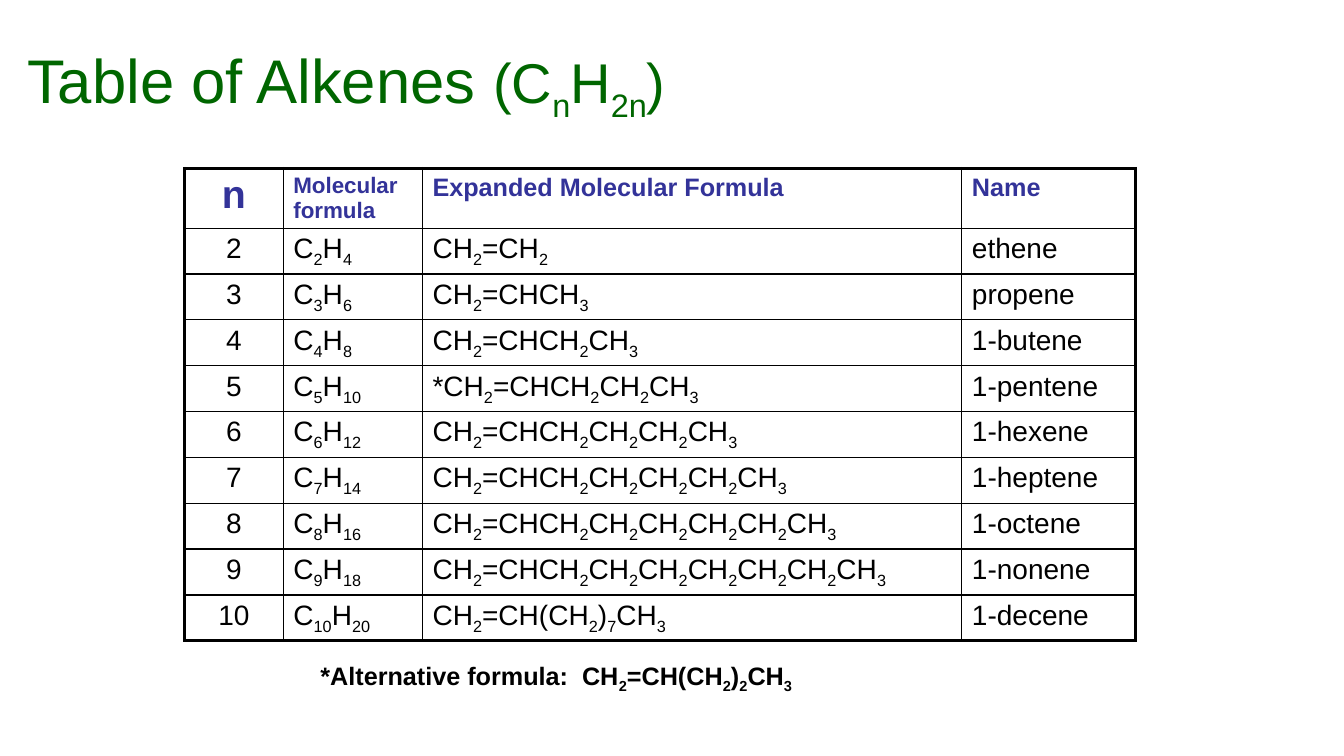
from pptx import Presentation
from pptx.dml.color import RGBColor
from pptx.enum.text import MSO_AUTO_SIZE as AutoSize, PP_ALIGN as Align
from pptx.oxml.ns import qn
from pptx.util import Inches, Pt
from lxml.etree import SubElement

FONT = "Arial"
BLACK, GREEN, BLUE = "000000", "006600", "333399"
NO_STYLE = "{2D5ABB26-0587-4C30-8999-92F81FD0307C}"
COLUMN_WIDTHS = [0.98, 1.38, 5.35, 1.72]
HEADER_HEIGHT, ROW_HEIGHT = 0.47, 0.44
THIN, THICK = 1, 2.25
HEADERS = [("n", 28), ("Molecular formula", 16),
           ("Expanded Molecular Formula", 18), ("Name", 18)]
NAMES = ["ethene", "propene", "1-butene", "1-pentene", "1-hexene",
         "1-heptene", "1-octene", "1-nonene", "1-decene"]
# Underscores enclose subscripts
SPECIAL_FORMULAS = {2: "CH_2_=CH_2_", 10: "CH_2_=CH(CH_2_)_7_CH_3_"}


def color(hex_value):
    return RGBColor.from_string(hex_value)


def set_font(paragraph, size, hex_value, bold=False):
    font = paragraph.font
    font.name, font.size, font.bold = FONT, Pt(size), bold
    font.color.rgb = color(hex_value)


def add_formula(paragraph, text, size=None):
    """Add runs, lowering each part enclosed in underscores."""
    for index, part in enumerate(text.split("_")):
        if not part:
            continue
        run = paragraph.add_run()
        run.text = part
        if size:
            run.font.size = Pt(size)
        if index % 2:
            run._r.get_or_add_rPr().set("baseline", "-25000")


def add_text_box(slide, left, top, width, height):
    shape = slide.shapes.add_textbox(
        Inches(left), Inches(top), Inches(width), Inches(height))
    shape.text_frame.word_wrap = False
    shape.text_frame.auto_size = AutoSize.SHAPE_TO_FIT_TEXT
    return shape.text_frame.paragraphs[0]


def add_title(slide, left, top, width, height):
    paragraph = add_text_box(slide, left, top, width, height)
    set_font(paragraph, 44, GREEN)
    add_formula(paragraph, "Table of Alkenes ", 44)
    add_formula(paragraph, "(C_n_H_2n_)", 40)


def add_footnote(slide, left, top, width, height):
    paragraph = add_text_box(slide, left, top, width, height)
    set_font(paragraph, 18, BLACK, bold=True)
    add_formula(paragraph, "*Alternative formula:  CH_2_=CH(CH_2_)_2_CH_3_")


def set_borders(cell, widths):
    properties = cell._tc.get_or_add_tcPr()
    for side, width in widths.items():
        line = SubElement(properties, qn(f"a:ln{side}"), w=str(Pt(width)))
        fill = SubElement(line, qn("a:solidFill"))
        SubElement(fill, qn("a:srgbClr"), val=BLACK)


def set_space_before(paragraph, percent):
    spacing = SubElement(paragraph._p.get_or_add_pPr(), qn("a:spcBef"))
    SubElement(spacing, qn("a:spcPct"), val=str(percent * 1000))


def alkene_row(n, name):
    star = "*" if n == 5 else ""
    chain = "CH_2_=CH" + "CH_2_" * (n - 3) + "CH_3_"
    formula = star + SPECIAL_FORMULAS.get(n, chain)
    return [str(n), f"C_{n}_H_{2 * n}_", formula, name]


def add_alkene_table(slide, left, top):
    rows = [[text for text, _ in HEADERS]]
    rows += [alkene_row(n, name) for n, name in enumerate(NAMES, start=2)]
    last_row, last_column = len(rows) - 1, len(COLUMN_WIDTHS) - 1
    frame = slide.shapes.add_table(
        len(rows), len(COLUMN_WIDTHS), Inches(left), Inches(top),
        Inches(sum(COLUMN_WIDTHS)),
        Inches(HEADER_HEIGHT + ROW_HEIGHT * last_row))
    table = frame.table
    table.first_row = table.horz_banding = False
    table._tbl.tblPr.find(qn("a:tableStyleId")).text = NO_STYLE

    for column, width in zip(table.columns, COLUMN_WIDTHS):
        column.width = Inches(width)
    for i, values in enumerate(rows):
        table.rows[i].height = Inches(ROW_HEIGHT if i else HEADER_HEIGHT)
        for j, text in enumerate(values):
            cell = table.cell(i, j)
            # Thick outer frame, thin inner grid
            set_borders(cell, {
                "L": THICK if j == 0 else THIN,
                "R": THICK if j == last_column else THIN,
                "T": THICK if i == 0 else THIN,
                "B": THICK if i == last_row else THIN})
            cell.fill.background()
            paragraph = cell.text_frame.paragraphs[0]
            set_space_before(paragraph, 20)
            paragraph.alignment = Align.LEFT if j else Align.CENTER
            if i == 0:
                set_font(paragraph, HEADERS[j][1], BLUE, bold=True)
            else:
                set_font(paragraph, 20, BLACK)
            add_formula(paragraph, text)


def main():
    presentation = Presentation()
    presentation.slide_width = Inches(13.33)
    presentation.slide_height = Inches(7.5)
    slide = presentation.slides.add_slide(presentation.slide_layouts[6])
    add_alkene_table(slide, 1.83, 1.67)
    add_title(slide, 0.17, 0.37, 6.68, 0.84)
    add_footnote(slide, 3.08, 6.5, 4.96, 0.4)
    presentation.save("out.pptx")


if __name__ == "__main__":
    main()
